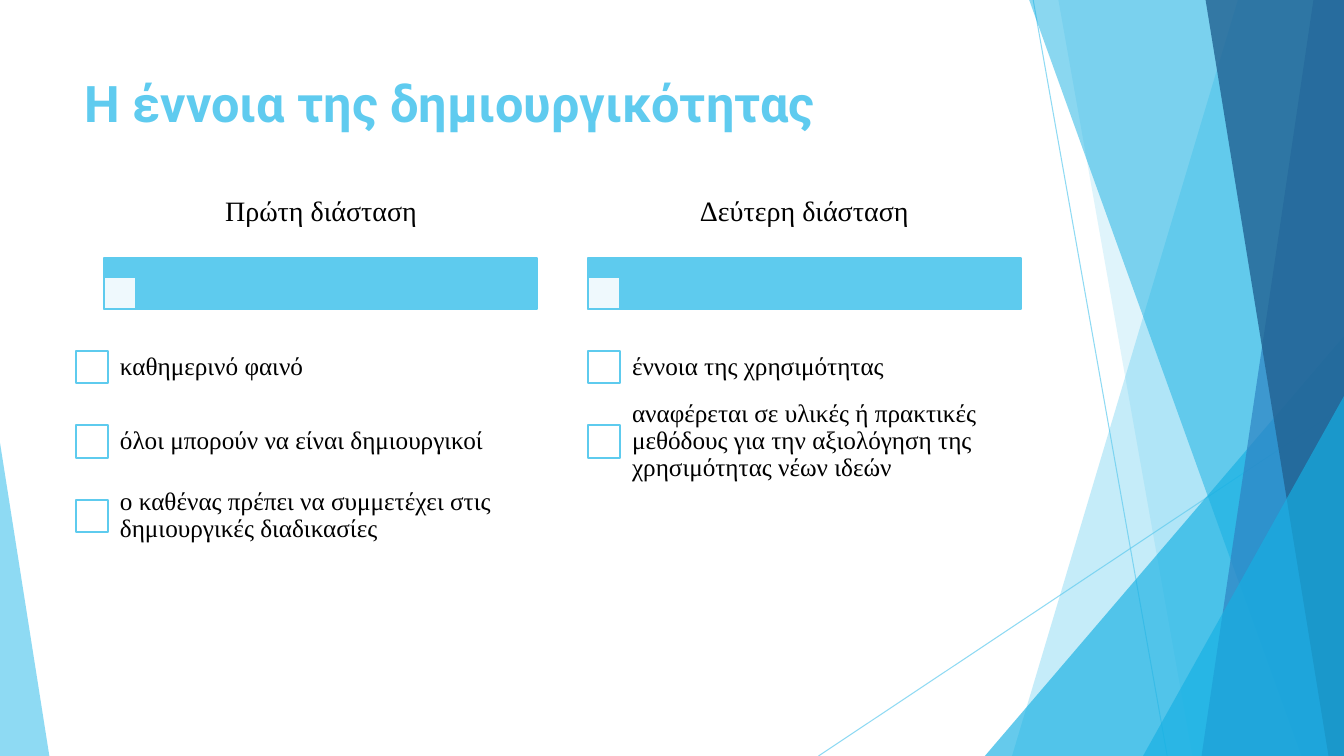
from lxml import etree
from pptx import Presentation, util as u
from pptx.dml.color import RGBColor
from pptx.enum import shapes, text
from pptx.oxml import ns

COLORS = {"sky": "5FCBEF", "bar": "5ECBEE", "cyan": "16B0E3", "blue": "2E83C3",
          "navy": "226292", "white": "FFFFFF", "black": "000000"}
COLS, ROWS = 40, 22.5
RECT = shapes.MSO_SHAPE.RECTANGLE
TRIANGLE = shapes.MSO_SHAPE.ISOSCELES_TRIANGLE


class Deck:
    font = "Times New Roman"
    outline = 1.5

    def __init__(self):
        self.prs = Presentation()
        self.prs.slide_width, self.prs.slide_height = u.Inches(13.33), u.Inches(7.5)
        self.s = self.prs.slides.add_slide(self.prs.slide_layouts[5])

    def x(self, cols):
        return round(self.prs.slide_width * cols / COLS)

    def y(self, rows):
        return round(self.prs.slide_height * rows / ROWS)

    def box(self, left, top, width, height):
        return self.x(left), self.y(top), self.x(width), self.y(height)

    def color(self, name):
        return RGBColor.from_string(COLORS[name])

    def fade(self, sp, opacity):
        if opacity < 100:
            for clr in sp._element.spPr.iter(ns.qn("a:srgbClr")):
                etree.SubElement(clr, ns.qn("a:alpha"), val=str(opacity * 1000))

    def paint(self, sp, fill, opacity=100, line=None):
        sp.shadow.inherit = False
        sp.fill.solid()
        sp.fill.fore_color.rgb = self.color(fill)
        self.fade(sp, opacity)
        if line:
            sp.line.color.rgb = self.color(line)
            sp.line.width = u.Pt(self.outline)
        else:
            sp.line.fill.background()

    def line(self, x1, y1, x2, y2):
        sp = self.s.shapes.add_connector(shapes.MSO_CONNECTOR.STRAIGHT,
                                         self.x(x1), self.y(y1), self.x(x2), self.y(y2))
        sp.line.color.rgb = self.color("sky")
        sp.line.width = u.Pt(0.75)
        self.fade(sp, 70)
        etree.SubElement(sp._element.spPr, ns.qn("a:effectLst"))

    def facet(self, top_x, bottom_x, fill, opacity):
        fb = self.s.shapes.build_freeform(self.x(top_x), 0)
        fb.add_line_segments([(self.x(COLS), 0), (self.x(COLS), self.y(ROWS)),
                              (self.x(bottom_x), self.y(ROWS))])
        self.paint(fb.convert_to_shape(), fill, opacity)

    def triangle(self, left, top, width, apex, fill, opacity):
        sp = self.s.shapes.add_shape(TRIANGLE, *self.box(left, top, width, ROWS - top))
        sp.adjustments[0] = apex
        self.paint(sp, fill, opacity)

    def rect(self, left, top, width, height, fill, opacity=100):
        sp = self.s.shapes.add_shape(RECT, *self.box(left, top, width, height))
        self.paint(sp, fill, opacity, "bar")

    def set_text(self, tf, words, frame, para, font, color):
        p = tf.paragraphs[0]
        r = p.add_run()
        r.text = words
        for target, values in ((tf, frame), (p, para), (r.font, font)):
            for name, value in values.items():
                setattr(target, name, value)
        r.font.color.rgb = self.color(color)

    def title(self, words, *place):
        sp = self.s.shapes.title
        sp.left, sp.top, sp.width, sp.height = self.box(*place)
        self.set_text(sp.text_frame, words,
                      {"word_wrap": True, "auto_size": text.MSO_AUTO_SIZE.NONE,
                       "vertical_anchor": text.MSO_ANCHOR.TOP},
                      {"alignment": text.PP_ALIGN.LEFT},
                      {"size": u.Pt(36), "name": "Roboto", "bold": True}, "sky")

    def label(self, words, place, size, inset, align):
        sp = self.s.shapes.add_textbox(*self.box(*place))
        frame = {f"margin_{side}": u.Inches(inset) for side in ("left", "right", "top", "bottom")}
        frame.update(word_wrap=True, vertical_anchor=text.MSO_ANCHOR.MIDDLE)
        self.set_text(sp.text_frame, words, frame, {"alignment": align, "line_spacing": 0.9},
                      {"size": u.Pt(size), "name": self.font}, "black")

    def dimension(self, heading, items, left, bar_left, heading_width):
        side, step, first = 0.96, 2.22, 9.81
        self.rect(bar_left, 7.68, 12.9, 1.53, "bar")
        self.rect(bar_left, 8.25, side, side, "white", 90)
        self.label(heading, (left, 4.95, heading_width, 2.73), 20, 0.04, text.PP_ALIGN.CENTER)
        for i, item in enumerate(items):
            top = first + i * step
            self.rect(left, top + (step - side) / 2, side, side, "white")
            self.label(item, (left + 0.9, top, 12, step), 18, 0.14, text.PP_ALIGN.LEFT)


def main():
    deck = Deck()
    deck.line(30.75, 0, 34.74, ROWS)
    deck.line(COLS, 12.09, 24.36, ROWS)
    deck.facet(36.84, 30.12, "sky", 36)
    deck.facet(31.5, 35.49, "sky", 20)
    deck.triangle(29.31, 10, 10.69, 1, "cyan", 66)
    deck.facet(30.63, 38.73, "cyan", 50)
    deck.facet(39.09, 35.76, "blue", 70)
    deck.facet(35.88, 39.54, "navy", 80)
    deck.triangle(34.02, 11.79, 5.98, 1, "cyan", 66)
    deck.triangle(0, 13.17, 1.47, 0, "sky", 70)

    deck.title("Η έννοια της δημιουργικότητας", 2.22, 2.01, 28.2, 4.32)
    deck.dimension("Πρώτη διάσταση",
                   ["καθημερινό φαινό", "όλοι μπορούν να είναι δημιουργικοί",
                    "ο καθένας πρέπει να συμμετέχει στις δημιουργικές διαδικασίες"],
                   2.25, 3.09, 14.61)
    deck.dimension("Δεύτερη διάσταση",
                   ["έννοια της χρησιμότητας",
                    "αναφέρεται σε υλικές ή πρακτικές μεθόδους για την αξιολόγηση "
                    "της χρησιμότητας νέων ιδεών"],
                   17.49, 17.49, 12.9)
    deck.prs.save("out.pptx")


if __name__ == "__main__":
    main()
